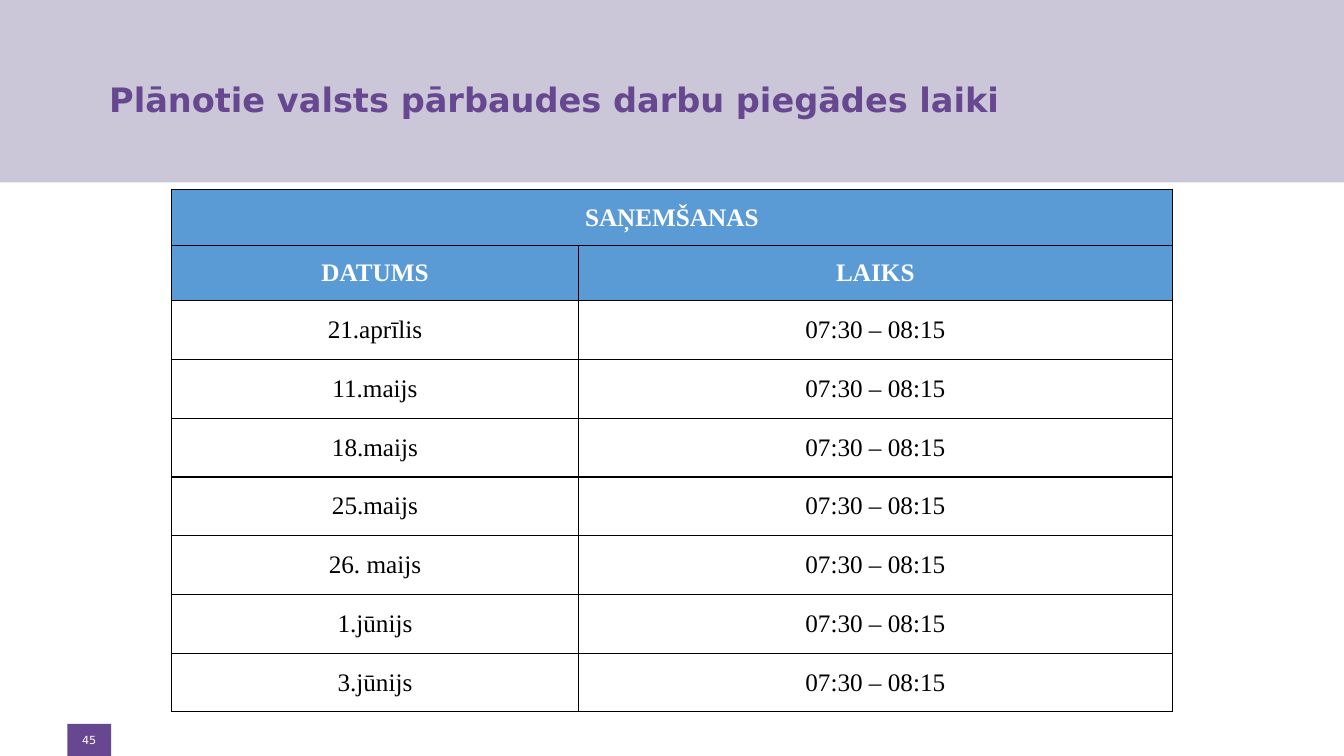
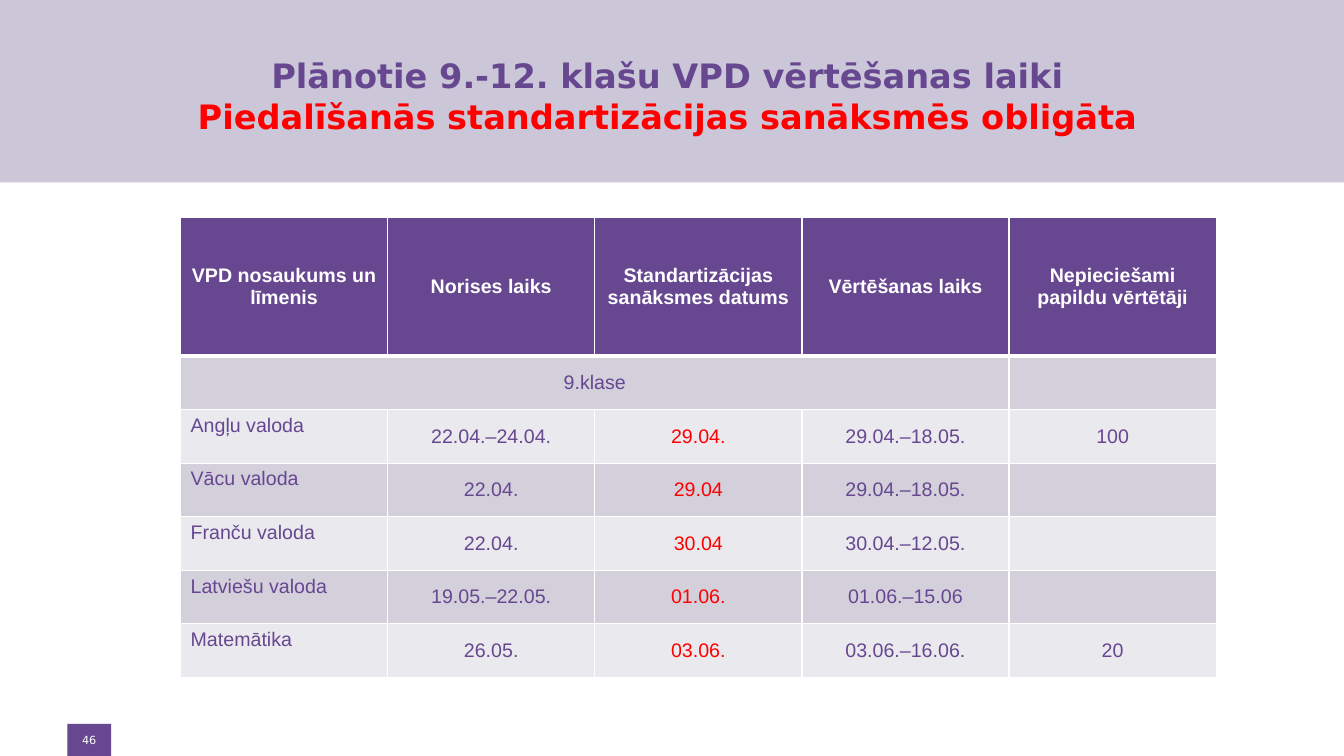
import pptx
import pptx.dml.color
import pptx.enum.shapes
import pptx.enum.text
import pptx.oxml
import pptx.oxml.ns
import pptx.util

Cm = pptx.util.Cm
Pt = pptx.util.Pt
RGB = pptx.dml.color.RGBColor
ALIGN = pptx.enum.text.PP_ALIGN
ANCHOR = pptx.enum.text.MSO_ANCHOR

PURPLE = RGB(0x66, 0x47, 0x90)
LILAC = RGB(0xCB, 0xC7, 0xD8)
BAND_DARK = RGB(0xD3, 0xCF, 0xDB)
BAND_LIGHT = RGB(0xEA, 0xE9, 0xEE)
BLUE = RGB(0x5B, 0x9B, 0xD5)
RED = RGB(0xFF, 0x00, 0x00)
BLACK = RGB(0x00, 0x00, 0x00)
WHITE = RGB(0xFF, 0xFF, 0xFF)

SLIDE_W, SLIDE_H = Cm(33.87), Cm(19.05)
TITLE_FONT = "DejaVu Sans"
NUMBER_BOX = (Cm(1.7), Cm(18.24), Cm(1.1), Cm(0.81))

DELIVERY_HEAD = [["SAŅEMŠANAS", ""], ["DATUMS", "LAIKS"]]
DELIVERY_DATES = ["21.aprīlis", "11.maijs", "18.maijs", "25.maijs",
                  "26. maijs", "1.jūnijs", "3.jūnijs"]
DELIVERY_TIME = "07:30 – 08:15"

GRADING_ROWS = [
    ["VPD nosaukums un\nlīmenis", "Norises laiks",
     "Standartizācijas\nsanāksmes datums", "Vērtēšanas laiks",
     "Nepieciešami papildu vērtētāji"],
    ["9.klase", "", "", "", ""],
    ["Angļu valoda", "22.04.–24.04.", "29.04.", "29.04.–18.05.", "100"],
    ["Vācu valoda", "22.04.", "29.04", "29.04.–18.05.", ""],
    ["Franču valoda", "22.04.", "30.04", "30.04.–12.05.", ""],
    ["Latviešu valoda", "19.05.–22.05.", "01.06.", "01.06.–15.06", ""],
    ["Matemātika", "26.05.", "03.06.", "03.06.–16.06.", "20"],
]


def add_block(s, box, color):
    """Draw a plain filled rectangle and return it."""
    sp = s.shapes.add_shape(pptx.enum.shapes.MSO_SHAPE.RECTANGLE, *box)
    sp.shadow.inherit = False
    sp.fill.solid()
    sp.fill.fore_color.rgb = color
    sp.line.fill.background()
    return sp


def set_font(p, name, size, color, bold=False):
    """Set the font of a whole paragraph."""
    p.font.name = name
    p.font.size = Pt(size)
    p.font.color.rgb = color
    p.font.bold = bold


def add_base(prs, number):
    """Add a slide with the title band and the numbered tab."""
    s = prs.slides.add_slide(prs.slide_layouts[6])
    add_block(s, (0, 0, SLIDE_W, Cm(4.6)), LILAC)
    tf = add_block(s, NUMBER_BOX, PURPLE).text_frame
    tf.margin_left = tf.margin_right = tf.margin_top = tf.margin_bottom = Cm(0.1)
    tf.vertical_anchor = ANCHOR.MIDDLE
    p = tf.paragraphs[0]
    p.text = str(number)
    p.alignment = ALIGN.CENTER
    set_font(p, TITLE_FONT, 8, WHITE)
    return s


def add_title(s, box, title, warning=None):
    """Place the bold title, with an optional red second line."""
    tf = s.shapes.add_textbox(*box).text_frame
    tf.word_wrap = True
    tf.vertical_anchor = ANCHOR.MIDDLE
    tf.margin_left = 0
    p = tf.paragraphs[0]
    p.alignment = ALIGN.CENTER
    set_font(p, TITLE_FONT, 24, PURPLE, True)
    r = p.add_run()
    r.text = title
    if warning:
        p.add_line_break()
        r = p.add_run()
        r.text = warning
    for r, color in zip(p.runs, (PURPLE, RED)):
        r.font.name = TITLE_FONT
        r.font.size = Pt(24)
        r.font.bold = True
        r.font.color.rgb = color


def add_grid(s, left, top, widths, heights):
    """Add an unbanded table with the given column widths and row heights."""
    table = s.shapes.add_table(len(heights), len(widths), left, top,
                               sum(widths), sum(heights)).table
    table.first_row = table.horz_banding = False
    for col, width in zip(table.columns, widths):
        col.width = width
    for row, height in zip(table.rows, heights):
        row.height = height
    return table


def set_borders(cell, color, **widths):
    """Draw all four cell borders, 1 pt unless a side (L, R, T, B) says otherwise."""
    tc_pr = cell._tc.get_or_add_tcPr()
    for i, side in enumerate("LRTB"):
        tc_pr.insert(i, pptx.oxml.parse_xml(
            f'<a:ln{side} {pptx.oxml.ns.nsdecls("a")} w="{Pt(widths.get(side, 1))}">'
            f'<a:solidFill><a:srgbClr val="{color}"/></a:solidFill></a:ln{side}>'))


def fill_cell(cell, text, fill, name, size, color, bold, centred=True):
    """Write and style one cell; no fill colour leaves it clear."""
    cell.text = text
    if fill is None:
        cell.fill.background()
    else:
        cell.fill.solid()
        cell.fill.fore_color.rgb = fill
    cell.vertical_anchor = ANCHOR.MIDDLE if centred else ANCHOR.TOP
    for p in cell.text_frame.paragraphs:
        p.alignment = ALIGN.CENTER if centred else ALIGN.LEFT
        set_font(p, name, size, color, bold)


def add_delivery_table(s, left, top):
    """Place the table of delivery dates and times."""
    rows = DELIVERY_HEAD + [[date, DELIVERY_TIME] for date in DELIVERY_DATES]
    heights = [Cm(1.4)] * 2 + [Cm(1.48)] * len(DELIVERY_DATES)
    table = add_grid(s, left, top, [Cm(10.26), Cm(14.96)], heights)
    for i, row in enumerate(rows):
        head = i < len(DELIVERY_HEAD)
        for j, text in enumerate(row):
            cell = table.cell(i, j)
            fill_cell(cell, text, BLUE if head else None, "Times New Roman", 18,
                      WHITE if head else BLACK, head)
            cell.margin_left = cell.margin_right = Cm(0.19)
            cell.margin_top = cell.margin_bottom = 0
            set_borders(cell, BLACK)
    table.cell(0, 0).merge(table.cell(0, 1))


def add_grading_table(s, left, top):
    """Place the banded table of exam, meeting and grading dates."""
    heights = [Cm(3.48)] + [Cm(1.35)] * (len(GRADING_ROWS) - 1)
    table = add_grid(s, left, top, [Cm(5.22)] * 5, heights)
    for i, row in enumerate(GRADING_ROWS):
        head = i == 0
        fill = PURPLE if head else (BAND_LIGHT, BAND_DARK)[i % 2]
        for j, text in enumerate(row):
            cell = table.cell(i, j)
            color = WHITE if head else RED if j == 2 else PURPLE
            fill_cell(cell, text, fill, "Arial", 14, color, head,
                      centred=j > 0 or i < 2)
            set_borders(cell, WHITE, B=3 if head else 1, T=3 if i == 1 else 1)
    table.cell(1, 0).merge(table.cell(1, 3))


def main():
    """Build and save both slides."""
    prs = pptx.Presentation()
    prs.slide_width, prs.slide_height = SLIDE_W, SLIDE_H

    s = add_base(prs, 45)
    add_title(s, (Cm(2.26), Cm(1.27), Cm(23.67), Cm(2.44)),
              "Plānotie valsts pārbaudes darbu piegādes laiki")
    add_delivery_table(s, Cm(4.32), Cm(4.78))

    s = add_base(prs, 46)
    add_title(s, (Cm(4.55), Cm(1.19), Cm(24.79), Cm(2.44)),
              "Plānotie 9.-12. klašu VPD vērtēšanas laiki",
              "Piedalīšanās standartizācijas sanāksmēs obligāta")
    add_grading_table(s, Cm(4.55), Cm(5.49))

    prs.save("out.pptx")


if __name__ == "__main__":
    main()
